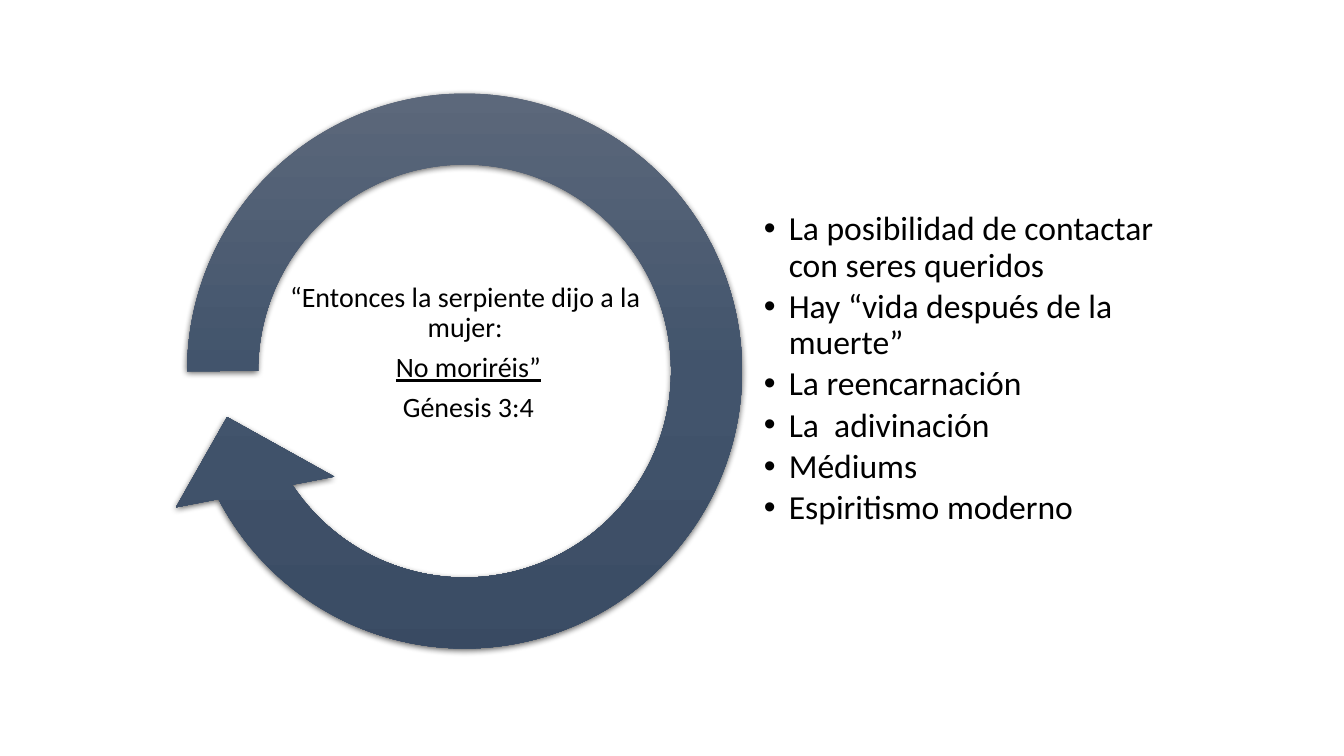
from lxml import etree
from pptx import Presentation
from pptx import util as u
from pptx.dml.color import RGBColor
from pptx.enum import shapes, text
from pptx.oxml import ns

BLACK = "000000"
ARROW_STOPS = [(0, "606B7D"), (50, "42546C"), (100, "394A62")]
VERSE = [
    [("“Entonces la serpiente dijo a la mujer:", False)],
    [(" ", False), ("No moriréis”", True)],
    [(" Génesis 3:4", False)],
]
BELIEFS = [
    "La posibilidad de contactar con seres queridos",
    "Hay “vida después de la muerte”",
    "La reencarnación",
    "La  adivinación",
    "Médiums",
    "Espiritismo moderno",
]


def rgb(value):
    """Turn a hex string into a colour."""
    return RGBColor.from_string(value)


def child(parent, tag, **attributes):
    """Append a drawing element with the given attributes."""
    element = etree.SubElement(parent, ns.qn(tag))
    for name, value in attributes.items():
        element.set(name, str(value))
    return element


def add_bullet(paragraph, indent):
    """Give a paragraph a round bullet with a hanging indent."""
    properties = paragraph._p.get_or_add_pPr()
    properties.set("marL", str(indent))
    properties.set("indent", str(-indent))
    child(properties, "a:buFont", typeface="Arial")
    child(properties, "a:buChar", char="•")


def add_text(slide, box, paragraphs, size, space_after, inset,
             align=text.PP_ALIGN.LEFT, bullets=False, font="Calibri", color=BLACK):
    """Add a middle-anchored text box of paragraphs made of (words, underline) runs."""
    frame = slide.shapes.add_textbox(*map(u.Cm, box)).text_frame
    frame.word_wrap = True
    frame.vertical_anchor = text.MSO_ANCHOR.MIDDLE
    frame.margin_left = frame.margin_right = u.Cm(inset)
    frame.margin_top = frame.margin_bottom = u.Cm(inset)
    for index, runs in enumerate(paragraphs):
        paragraph = frame.add_paragraph() if index else frame.paragraphs[0]
        paragraph.alignment = align
        paragraph.line_spacing = 0.9
        paragraph.space_after = u.Pt(space_after)
        if bullets:
            add_bullet(paragraph, u.Cm(0.63))
        for words, underline in runs:
            run = paragraph.add_run()
            run.text = words
            run.font.name = font
            run.font.size = u.Pt(size)
            run.font.underline = underline
            run.font.color.rgb = rgb(color)


def add_cycle_arrow(slide, box, adjustments, stops):
    """Add a circular arrow with a vertical gradient and a soft shadow."""
    arrow = slide.shapes.add_shape(
        shapes.MSO_SHAPE.CIRCULAR_ARROW, *map(u.Cm, box))
    for index, value in enumerate(adjustments):
        arrow.adjustments[index] = value
    properties = arrow._element.spPr
    gradient = child(properties, "a:gradFill", rotWithShape=1)
    stop_list = child(gradient, "a:gsLst")
    for position, color in stops:
        stop = child(stop_list, "a:gs", pos=position * 1000)
        child(stop, "a:srgbClr", val=color)
    child(gradient, "a:lin", ang=90 * 60000, scaled=0)
    arrow.line.fill.background()
    arrow.shadow.inherit = False
    shadow = child(properties.find(ns.qn("a:effectLst")), "a:outerShdw",
                   blurRad=u.Pt(4.5), dist=u.Pt(1.5), dir=90 * 60000,
                   algn="ctr", rotWithShape=0)
    child(child(shadow, "a:srgbClr", val=BLACK), "a:alpha", val=63000)


def main():
    """Build the slide and save it."""
    deck = Presentation()
    deck.slide_width, deck.slide_height = u.Cm(33.87), u.Cm(19.05)
    slide = deck.slides.add_slide(deck.slide_layouts[6])
    add_cycle_arrow(slide, (3.58, 1.22, 16.26, 16.26),
                    (0.11, 11.42, 90, 108, 0.125), ARROW_STOPS)
    add_text(slide, (19.2, 3.76, 11.07, 11.1),
             [[(belief, False)] for belief in BELIEFS],
             size=24, space_after=3.6, inset=0.05, bullets=True)
    add_text(slide, (7.19, 7.11, 9.07, 3.6), VERSE,
             size=20, space_after=7, inset=0.03, align=text.PP_ALIGN.CENTER)
    deck.save("out.pptx")


if __name__ == "__main__":
    main()
